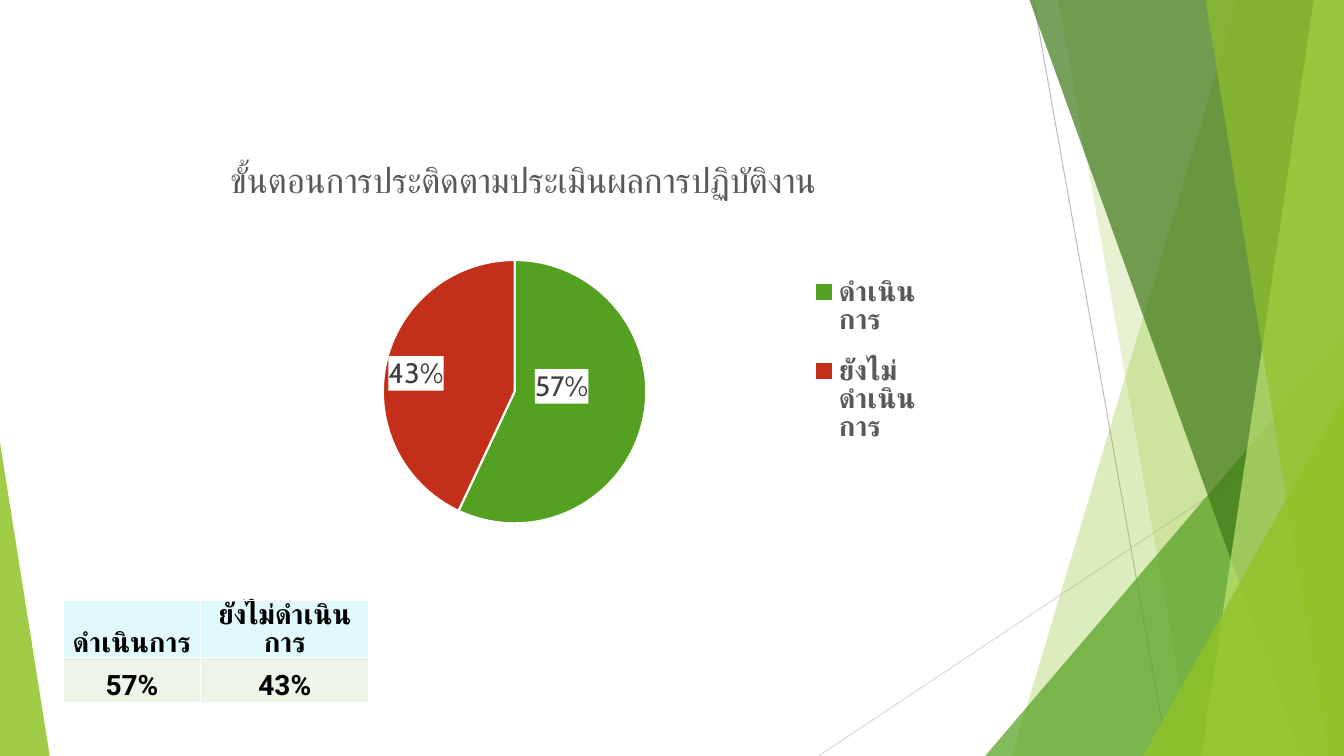
import pptx
import pptx.util
import pptx.chart.data
import pptx.dml.color
import pptx.enum.chart
import pptx.enum.shapes
import pptx.enum.text
import pptx.oxml.ns
from lxml import etree

HUES = dict(lime="90C226", leaf="54A021", pine="3F7819", pale="C0E474",
            red="C42F1A", white="FFFFFF", grey="595959", dark="404040",
            black="000000", line="BFBFBF", faint="D9D9D9",
            head="DFF9FD", body="EEF4E8")
WIDE, HIGH = pptx.util.Inches(13.333), pptx.util.Inches(7.5)
STEPS = {"ดำเนินการ": 0.57, "ยังไม่ดำเนินการ": 0.43}
TITLE = "ขั้นตอนการประติดตามประเมินผลการปฏิบัติงาน"


def rgb(hue):
    return pptx.dml.color.RGBColor.from_string(HUES[hue])


def spot(x, y):
    """Turn percentages of the slide into lengths."""
    return int(WIDE * x / 100), int(HIGH * y / 100)


def add(parent, tag, **attrs):
    node = etree.SubElement(parent, pptx.oxml.ns.qn(tag))
    for key, value in attrs.items():
        node.set(key, str(value))
    return node


def style(item, form):
    for key, value in form.items():
        setattr(item, key, value)


def ink(font, size, hue, name="Roboto", bold=False):
    style(font, dict(size=pptx.util.Pt(size), name=name, bold=bold))
    font.color.rgb = rgb(hue)


def paint(shape, hue, alpha):
    shape.shadow.inherit = False
    shape.fill.solid()
    shape.fill.fore_color.rgb = rgb(hue)
    shape.line.fill.background()
    tint = shape.fill._xPr.find(".//" + pptx.oxml.ns.qn("a:srgbClr"))
    add(tint, "a:alpha", val=alpha * 1000)


def ray(shapes, start, end, hue):
    line = shapes.add_connector(pptx.enum.shapes.MSO_CONNECTOR.STRAIGHT,
                                *spot(*start), *spot(*end))
    line.line.color.rgb = rgb(hue)
    line.line.width = pptx.util.Pt(0.75)
    add(line._element.spPr, "a:effectLst")


def blade(shapes, top, foot, hue, alpha):
    """Draw a full-height facet against the right edge."""
    form = shapes.build_freeform(*spot(top, 0))
    form.add_line_segments([spot(100, 0), spot(100, 100), spot(foot, 100)])
    paint(form.convert_to_shape(), hue, alpha)


def wedge(shapes, left, top, width, peak, hue, alpha):
    """Draw a triangle standing on the bottom edge."""
    shape = shapes.add_shape(pptx.enum.shapes.MSO_SHAPE.ISOSCELES_TRIANGLE,
                             *spot(left, top), *spot(width, 100 - top))
    shape.adjustments[0] = peak
    paint(shape, hue, alpha)


def backdrop(shapes):
    ray(shapes, (76.9, 0), (86.9, 100), "line")
    ray(shapes, (100, 53.75), (60.9, 100), "faint")
    for draw, *args in (
            (blade, 92.1, 75.3, "lime", 30),
            (blade, 78.75, 88.75, "lime", 20),
            (wedge, 73.3, 44.4, 26.7, 1, "leaf", 72),
            (blade, 76.6, 96.85, "pine", 70),
            (blade, 97.75, 89.4, "pale", 70),
            (blade, 89.7, 98.85, "lime", 65),
            (wedge, 85.05, 52.4, 14.95, 1, "lime", 80),
            (wedge, 0, 58.55, 3.7, 0, "lime", 85)):
        draw(shapes, *args)


def place(layout, inner=False, **box):
    """Fill a chart layout with shares of the chart's size."""
    for child in list(layout):
        layout.remove(child)
    hold = add(layout, "c:manualLayout")
    if inner:
        add(hold, "c:layoutTarget", val="inner")
    if "w" in box:
        for axis in "xy":
            add(hold, f"c:{axis}Mode", val="edge")
    for key, value in box.items():
        add(hold, "c:" + key, val=value)


def label(point, dx, dy):
    tag = point.data_label
    ink(tag.font, 20, "dark", "Cabin")
    tag.position = pptx.enum.chart.XL_LABEL_POSITION.CENTER
    node = tag._dLbl
    layout = add(node, "c:layout")
    place(layout, x=dx, y=dy)
    back = add(node, "c:spPr")
    add(add(back, "a:solidFill"), "a:srgbClr", val=HUES["white"])
    for old in node.findall(pptx.oxml.ns.qn("c:spPr"))[:-1]:
        node.remove(old)
    node.insert(1, layout)
    node.insert(2, back)


def pie(shapes, box):
    data = pptx.chart.data.CategoryChartData(number_format="0%")
    data.categories = list(STEPS)
    data.add_series("Series 1", list(STEPS.values()))
    chart = shapes.add_chart(pptx.enum.chart.XL_CHART_TYPE.PIE,
                             *spot(*box[:2]), *spot(*box[2:]), data).chart
    ink(chart.font, 10, "black", "Cabin")
    chart.has_title = True
    chart.chart_title.include_in_layout = False
    run = chart.chart_title.text_frame.paragraphs[0].add_run()
    run.text = TITLE
    ink(run.font, 25, "grey")
    chart.has_legend = True
    legend = chart.legend
    style(legend, dict(include_in_layout=False,
                       position=pptx.enum.chart.XL_LEGEND_POSITION.RIGHT))
    ink(legend.font, 20, "grey", bold=True)
    place(legend._element.get_or_add_layout(),
          x=0.83, y=0.29, w=0.14, h=0.53)
    area = chart._chartSpace.chart.plotArea
    layout = area.find(pptx.oxml.ns.qn("c:layout"))
    if layout is None:
        layout = add(area, "c:layout")
        area.insert(0, layout)
    place(layout, True, x=0.02, y=0.3, w=0.94, h=0.67)
    plot = chart.plots[0]
    plot.vary_by_categories = True
    looks = (("leaf", -0.02, -0.05), ("red", -0.04, -0.01))
    for index, (hue, dx, dy) in enumerate(looks):
        point = plot.series[0].points[index]
        point.format.fill.solid()
        point.format.fill.fore_color.rgb = rgb(hue)
        point.format.line.color.rgb = rgb("white")
        point.format.line.width = pptx.util.Pt(1.5)
        label(point, dx, dy)


def fill(cell, text, hue):
    thin = pptx.util.Inches(0.01)
    style(cell, dict(margin_left=thin, margin_right=thin, margin_top=thin,
                     margin_bottom=0,
                     vertical_anchor=pptx.enum.text.MSO_ANCHOR.BOTTOM))
    para = cell.text_frame.paragraphs[0]
    para.alignment = pptx.enum.text.PP_ALIGN.CENTER
    run = para.add_run()
    run.text = text
    ink(run.font, 20, "black", bold=True)
    props = cell._tc.get_or_add_tcPr()
    for side in "LRTB":
        edge = add(props, "a:ln" + side, w=pptx.util.Pt(1))
        add(add(edge, "a:solidFill"), "a:srgbClr", val=HUES["white"])
    cell.fill.solid()
    cell.fill.fore_color.rgb = rgb(hue)


def grid(shapes, box):
    rows = (("head", list(STEPS)),
            ("body", [f"{share:.0%}" for share in STEPS.values()]))
    width, height = spot(*box[2:])
    table = shapes.add_table(2, 2, *spot(*box[:2]), width, height).table
    for col, share in zip(table.columns, (0.45, 0.55)):
        col.width = int(width * share)
    for r, (hue, texts) in enumerate(rows):
        for c, text in enumerate(texts):
            fill(table.cell(r, c), text, hue)


def main():
    deck = pptx.Presentation()
    style(deck, dict(slide_width=WIDE, slide_height=HIGH))
    shapes = deck.slides.add_slide(deck.slide_layouts[6]).shapes
    backdrop(shapes)
    pie(shapes, (7.05, 18.8, 63.75, 52))
    grid(shapes, (4.7, 79.45, 22.75, 11.8))
    deck.save("out.pptx")


if __name__ == "__main__":
    main()
